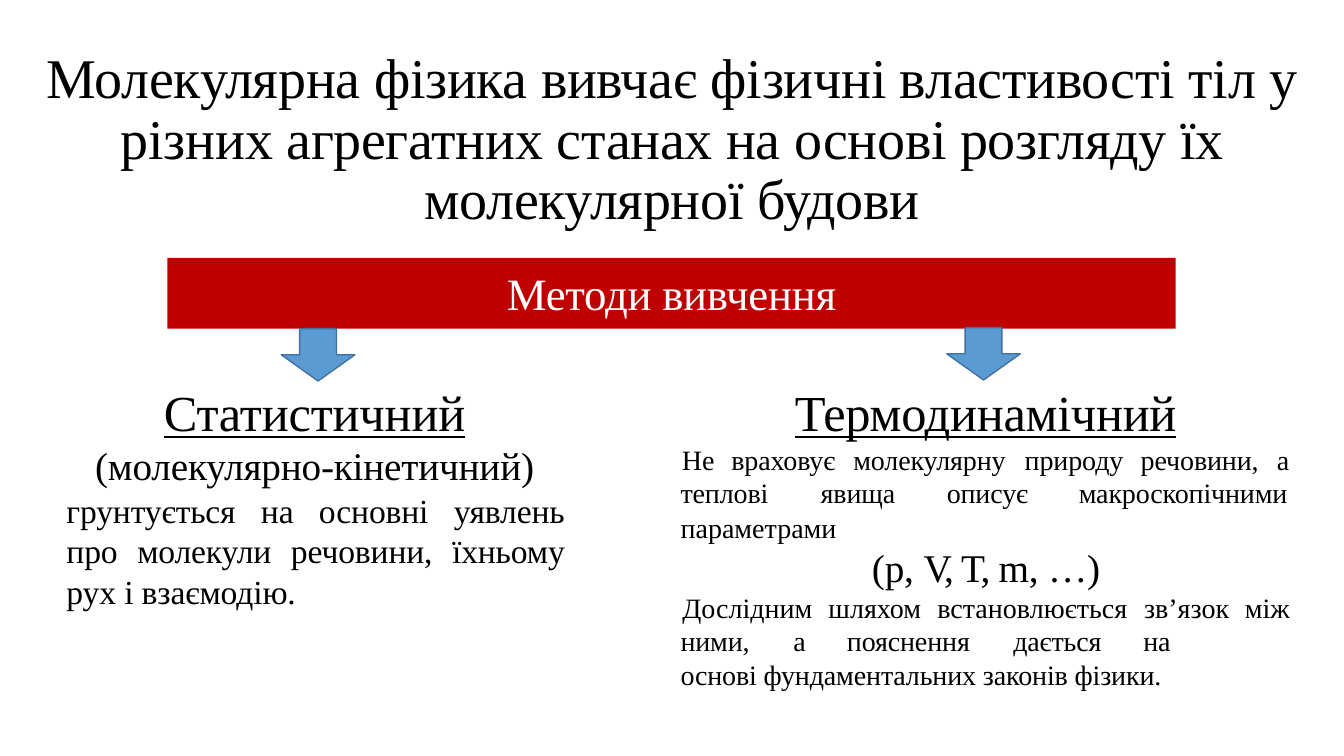
from pptx import Presentation, util as u
from pptx.dml.color import RGBColor
from pptx.enum import shapes, text
from pptx.oxml.ns import qn
from lxml import etree

INK = {"black": "000000", "white": "FFFFFF", "red": "C00000",
       "blue": "5B9BD4", "edge": "41709C"}
MID, LEFT, FULL = text.PP_ALIGN.CENTER, text.PP_ALIGN.LEFT, text.PP_ALIGN.JUSTIFY


def hue(name):
    return RGBColor.from_string(INK[name])


def write(frame, words, size=20, ink="black", align=MID, line=False,
          gap=0, space=-0.1, tabs=(), top=0.03, lead=None):
    """Add a paragraph; words is a string or a list of (text, spacing) runs."""
    first = not frame.text
    if first:
        frame.word_wrap = True
        frame.auto_size = text.MSO_AUTO_SIZE.SHAPE_TO_FIT_TEXT
        frame.vertical_anchor = text.MSO_ANCHOR.TOP
        frame.margin_left = frame.margin_right = frame.margin_bottom = 0
        frame.margin_top = u.Inches(top)
    par = frame.paragraphs[0] if first else frame.add_paragraph()
    par.alignment = align
    par.space_before = u.Pt(gap)
    if lead:
        par.line_spacing = lead
    if tabs:
        stops = etree.SubElement(par._p.get_or_add_pPr(), qn("a:tabLst"))
        for tab in tabs:
            etree.SubElement(stops, qn("a:tab"), pos=str(u.Inches(tab)), algn="l")
    for part, track in [(words, space)] if isinstance(words, str) else words:
        for num, row in enumerate(part.split("\n")):
            if num:
                par.add_line_break()
            run = par.add_run()
            run.text = row
            font = run.font
            font.name, font.size, font.underline = "Times New Roman", u.Pt(size), line
            font.color.rgb = hue(ink)
            run._r.get_or_add_rPr().set("spc", str(round(track * 100)))


deck = Presentation()
deck.slide_width, deck.slide_height = u.Inches(13.33), u.Inches(7.5)
slide = deck.slides.add_slide(deck.slide_layouts[5])

title = slide.shapes.title
title.left, title.top = u.Inches(0.38), u.Inches(0.34)
title.width, title.height = u.Inches(12.57), u.Inches(1.89)
write(title.text_frame, "Молекулярна фізика вивчає фізичні властивості тіл у різних "
      "агрегатних станах на основі розгляду їх молекулярної будови",
      size=40, space=-0.2, top=0.16, lead=0.9)

bar = slide.shapes.add_shape(shapes.MSO_SHAPE.RECTANGLE, u.Inches(1.66),
                             u.Inches(2.56), u.Inches(10), u.Inches(0.7))
bar.shadow.inherit = False
bar.fill.solid()
bar.fill.fore_color.rgb = hue("red")
bar.line.fill.background()
write(bar.text_frame, "Методи вивчення", size=32, ink="white", space=-0.2, top=0.08)

head = dict(size=36, line=True)
boxes = [
    ((0.91, 3.75, 4.42, 1.1), [
        ("Статистичний", head),
        ("(молекулярно-кінетичний)", dict(size=28, gap=0.2))]),
    ((0.66, 4.83, 4.94, 1.23), [
        ("грунтується на основні уявлень про молекули речовини, "
         "їхньому рух і взаємодію.", dict(size=24, align=FULL))]),
    ((6.75, 3.75, 6.05, 0.97), [
        ("Термодинамічний", dict(head, space=-0.2)),
        ("Не\tврахує\tмолекулярну\tприроду\tречовини,\tа",
         dict(gap=0.6, tabs=(0.49, 1.7, 3.4, 4.55, 5.9)))]),
    ((6.75, 4.69, 6.05, 0.36), [
        ("теплові\tявища\tописує\tмакроскопічними",
         dict(align=LEFT, tabs=(1.39, 2.64, 3.95)))]),
    ((6.75, 5.03, 1.58, 0.36), [("параметрами", dict(align=LEFT, space=0))]),
    ((6.75, 5.36, 6.06, 0.83), [
        ([("(p, ", -0.1), ("V, ", -1.9), ("T, ", -1.1), ("m, …)", -0.1)],
         dict(size=28)),
        ("Дослідним\tшляхом\tвстановлюється\tзв’язок\tміж",
         dict(gap=0.3, space=0, tabs=(1.45, 2.53, 4.58, 5.58)))]),
    ((6.75, 6.16, 6.06, 0.7), [
        ("ними,\tа\tпояснення\tдається\tна\n"
         "основі фундаментальних законів фізики.",
         dict(align=LEFT, tabs=(1.12, 1.65, 3.3, 4.59)))]),
]
# The list gives "враховує" its full spelling below.
for place, lines in boxes:
    frame = slide.shapes.add_textbox(*map(u.Inches, place)).text_frame
    for words, style in lines:
        if isinstance(words, str):
            words = words.replace("врахує", "враховує")
        write(frame, words, **style)

for left, top in ((2.79, 3.26), (9.39, 3.25)):
    arrow = slide.shapes.add_shape(shapes.MSO_SHAPE.DOWN_ARROW, u.Inches(left),
                                   u.Inches(top), u.Inches(0.73), u.Inches(0.52))
    arrow.shadow.inherit = False
    arrow.fill.solid()
    arrow.fill.fore_color.rgb = hue("blue")
    arrow.line.color.rgb = hue("edge")
    arrow.line.width = u.Pt(0.96)

deck.save("out.pptx")
